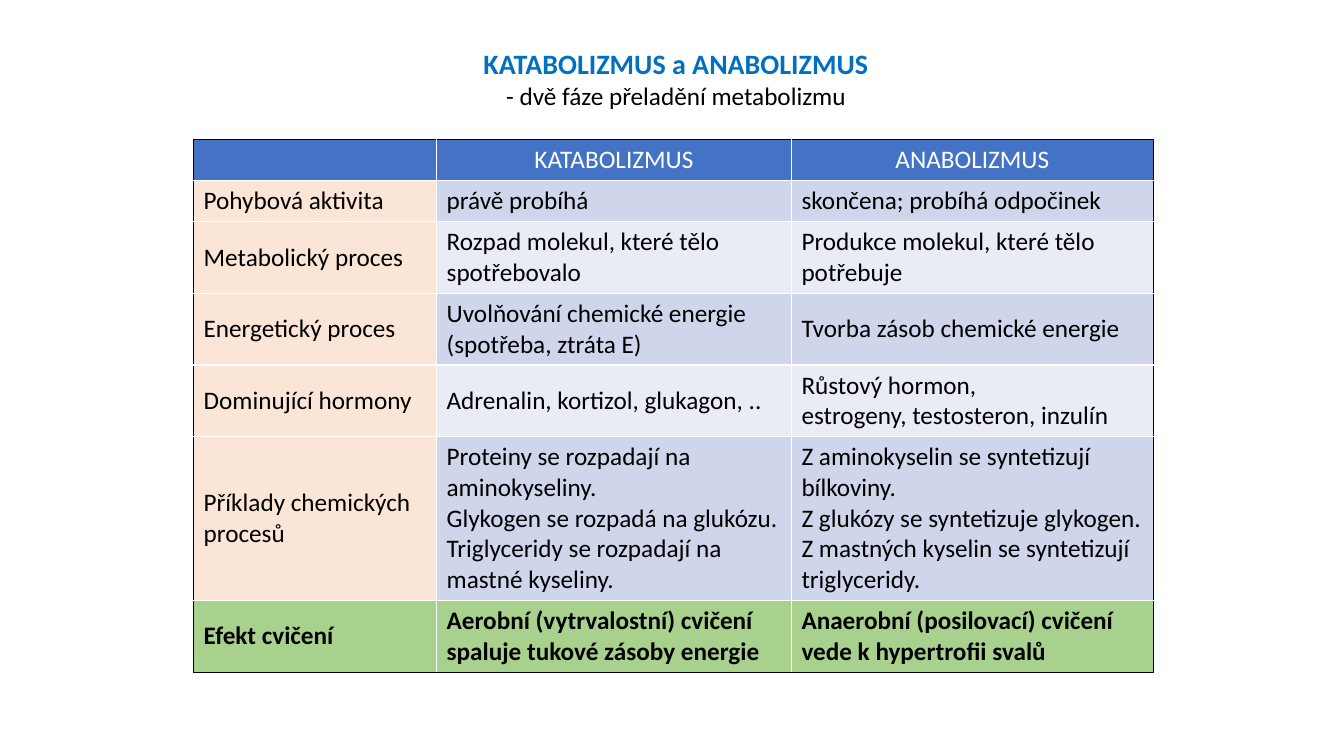
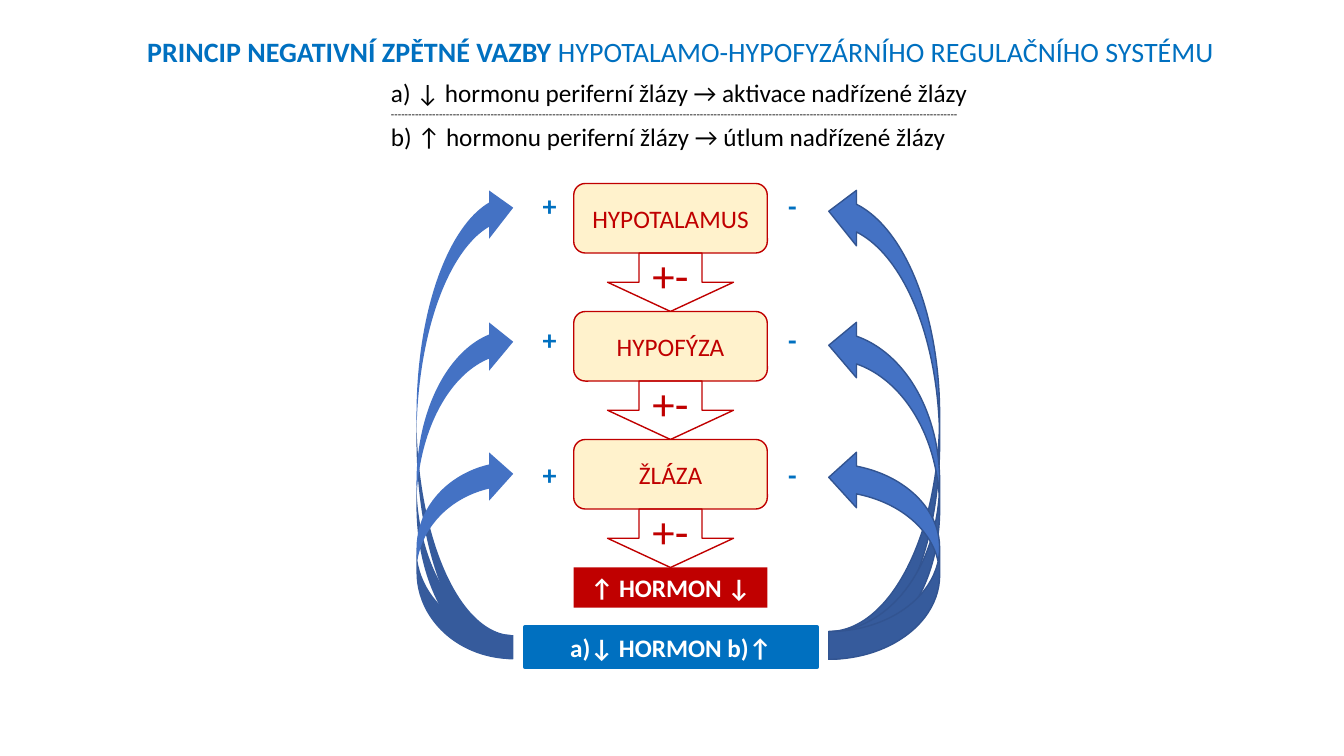
from collections import namedtuple

from lxml.etree import SubElement
from pptx import Presentation
from pptx.dml.color import RGBColor
from pptx.enum.shapes import MSO_SHAPE
from pptx.enum.text import MSO_ANCHOR, PP_ALIGN
from pptx.oxml.ns import qn
from pptx.util import Inches, Pt

FONT = "Calibri"
BODY_SIZE, TITLE_SIZE, SIGN_SIZE = 18, 20, 32
COLORS = {
    "black": "000000", "white": "FFFFFF", "title": "0070C0",
    "header": "4472C4", "label": "FBE5D6", "band_dark": "CFD5EA",
    "band_light": "E9EBF5", "effect": "A9D18E",
    "gland": "FFF2CC", "hormone": "C00000",
    "loop": "4472C4", "loop_edge": "325491",
}
Box = namedtuple("Box", "left top width height")
Span = namedtuple("Span", "text size color bold", defaults=(BODY_SIZE, "black", False))

TABLE_COLUMNS = [2.41, 3.52, 3.59]
TABLE_ROWS = [  # height, fill, cells; each cell lists its paragraphs
    (0.41, "header", [[], ["KATABOLIZMUS"], ["ANABOLIZMUS"]]),
    (0.41, "band_dark", [["Pohybová aktivita"], ["právě probíhá"],
                         ["skončena; probíhá odpočinek"]]),
    (0.7, "band_light", [["Metabolický proces"],
                         ["Rozpad molekul, které tělo spotřebovalo"],
                         ["Produkce molekul, které tělo potřebuje"]]),
    (0.7, "band_dark", [["Energetický proces"],
                        ["Uvolňování chemické energie (spotřeba, ztráta E)"],
                        ["Tvorba zásob chemické energie"]]),
    (0.7, "band_light", [["Dominující hormony"],
                         ["Adrenalin, kortizol, glukagon, .."],
                         ["Růstový hormon,", "estrogeny, testosteron, inzulín"]]),
    (1.6, "band_dark", [["Příklady chemických procesů"],
                        ["Proteiny se rozpadají na aminokyseliny.",
                         "Glykogen se rozpadá na glukózu.",
                         "Triglyceridy se rozpadají na mastné kyseliny."],
                        ["Z aminokyselin se syntetizují bílkoviny.",
                         "Z glukózy se syntetizuje glykogen.",
                         "Z mastných kyselin se syntetizují triglyceridy."]]),
    (0.7, "effect", [["Efekt cvičení"],
                     ["Aerobní (vytrvalostní) cvičení spaluje tukové zásoby energie"],
                     ["Anaerobní (posilovací) cvičení vede k hypertrofii svalů"]]),
]


def rgb(name):
    return RGBColor.from_string(COLORS[name])


def write(frame, paragraphs, align=PP_ALIGN.CENTER, gap=0):
    """Fill a text frame with lists of spans; gap is the space between paragraphs."""
    for index, spans in enumerate(paragraphs):
        para = frame.add_paragraph() if index else frame.paragraphs[0]
        para.alignment = align
        if index and gap:
            para.space_before = Pt(gap)
        for span in spans:
            run = para.add_run()
            run.text = span.text
            run.font.name = FONT
            run.font.size = Pt(span.size)
            run.font.bold = span.bold
            run.font.color.rgb = rgb(span.color)


def add_text(page, box, paragraphs, **layout):
    frame = page.shapes.add_textbox(*map(Inches, box)).text_frame
    frame.word_wrap = True
    write(frame, paragraphs, **layout)


def add_figure(page, kind, box, fill=None, line=None, width=1, span=None,
               anchor=MSO_ANCHOR.MIDDLE):
    figure = page.shapes.add_shape(kind, *map(Inches, box))
    figure.shadow.inherit = False
    if fill:
        figure.fill.solid()
        figure.fill.fore_color.rgb = rgb(fill)
    else:
        figure.fill.background()
    if line:
        figure.line.color.rgb = rgb(line)
        figure.line.width = Pt(width)
    else:
        figure.line.fill.background()
    if span:
        figure.text_frame.vertical_anchor = anchor
        write(figure.text_frame, [[span]])
    return figure


def set_borders(cell, outer_sides):
    """Black on the sides at the table's edge, white inside."""
    properties = cell._tc.get_or_add_tcPr()
    for side in "LRTB":
        line = SubElement(properties, qn(f"a:ln{side}"), w=str(Pt(1)))
        fill = SubElement(line, qn("a:solidFill"))
        color = "black" if side in outer_sides else "white"
        SubElement(fill, qn("a:srgbClr"), val=COLORS[color])


def add_phase_table(page, left, top):
    last_row, last_column = len(TABLE_ROWS) - 1, len(TABLE_COLUMNS) - 1
    heights = [height for height, _, _ in TABLE_ROWS]
    box = Box(left, top, sum(TABLE_COLUMNS), sum(heights))
    table = page.shapes.add_table(len(TABLE_ROWS), len(TABLE_COLUMNS),
                                  *map(Inches, box)).table
    table.first_row = table.horz_banding = False
    for column, width in zip(table.columns, TABLE_COLUMNS):
        column.width = Inches(width)
    for r, (height, row_fill, texts) in enumerate(TABLE_ROWS):
        table.rows[r].height = Inches(height)
        is_header, is_effect = r == 0, r == last_row
        for c, lines in enumerate(texts):
            cell = table.cell(r, c)
            edges = {"L": c == 0, "R": c == last_column, "T": is_header, "B": is_effect}
            set_borders(cell, [side for side, outer in edges.items() if outer])
            is_label = c == 0 and not is_header and not is_effect
            cell.fill.solid()
            cell.fill.fore_color.rgb = rgb("label" if is_label else row_fill)
            cell.vertical_anchor = MSO_ANCHOR.TOP if is_header else MSO_ANCHOR.MIDDLE
            color = "white" if is_header else "black"
            write(cell.text_frame,
                  [[Span(line, color=color, bold=is_effect)] for line in lines],
                  PP_ALIGN.CENTER if is_header else PP_ALIGN.LEFT)


def add_gland_chain(page, box, pitch):
    """Glands stacked at an equal pitch, each with an arrow down to the next."""
    gland_height, arrow_width = 0.69, 1.25
    arrow_left = box.left + (box.width - arrow_width) / 2
    for index, name in enumerate(["HYPOTALAMUS", "HYPOFÝZA", "ŽLÁZA"]):
        top = box.top + index * pitch
        add_figure(page, MSO_SHAPE.ROUNDED_RECTANGLE,
                   Box(box.left, top, box.width, gland_height),
                   "gland", "hormone", span=Span(name, color="hormone"))
        add_figure(page, MSO_SHAPE.DOWN_ARROW,
                   Box(arrow_left, top + gland_height, arrow_width, pitch - gland_height),
                   line="hormone", span=Span("+-", SIGN_SIZE, "hormone"))
    add_figure(page, MSO_SHAPE.RECTANGLE, Box(box.left, box.top + 3 * pitch, box.width, 0.4),
               "hormone", span=Span("↑ HORMON ↓", color="white", bold=True),
               anchor=MSO_ANCHOR.TOP)


def add_feedback_loops(page, box):
    """Nested curved arrows that rise on both sides from the foot of the box."""
    left_width, right_width = 0.96, 1.1
    bottom = box.top + box.height
    for length in (box.height, 3.39, 2.08):
        stimulating = add_figure(page, MSO_SHAPE.CURVED_LEFT_ARROW,
                                 Box(box.left, bottom - length, left_width, length), "loop")
        stimulating.rotation = 180
        center_x = box.left + box.width - right_width / 2
        center_y = bottom - length / 2
        inhibiting = add_figure(page, MSO_SHAPE.CURVED_UP_ARROW,
                                Box(center_x - length / 2, center_y - right_width / 2,
                                    length, right_width), "loop", "loop_edge")
        inhibiting.rotation = 270


def add_signs(page, box, sign):
    add_text(page, box, [[Span(sign, TITLE_SIZE, "title", True)]] * 3, gap=72)


def build_phases(page):
    add_phase_table(page, 1.92, 1.38)
    add_text(page, Box(4.42, 0.41, 4.57, 0.74), [
        [Span("KATABOLIZMUS a ANABOLIZMUS", TITLE_SIZE, "title", True)],
        [Span("- dvě fáze přeladění metabolizmu")]])


def build_feedback(page):
    add_text(page, Box(1.16, 0.29, 11.18, 0.44), [[
        Span("PRINCIP NEGATIVNÍ ZPĚTNÉ VAZBY ", TITLE_SIZE, "title", True),
        Span("HYPOTALAMO-HYPOFYZÁRNÍHO REGULAČNÍHO SYSTÉMU", TITLE_SIZE, "title")]])
    add_text(page, Box(3.78, 0.72, 5.93, 0.84), [
        [Span("a) ↓ hormonu periferní žlázy → aktivace nadřízené žlázy")],
        [Span("-" * 165, 8)],
        [Span("b) ↑ hormonu periferní žlázy → útlum nadřízené žlázy")]],
        align=PP_ALIGN.LEFT)
    top = 1.82
    add_feedback_loops(page, Box(4.13, top, 5.19, 4.72))
    add_gland_chain(page, Box(5.69, top, 1.92, 3.81), 1.27)
    for left, sign in ((5.21, "+"), (7.62, "-")):
        add_signs(page, Box(left, top, 0.48, 3.13), sign)
    add_figure(page, MSO_SHAPE.RECTANGLE, Box(5.21, 6.22, 2.89, 0.4), "title", "title", 3,
               Span("a)↓ HORMON b)↑", color="white", bold=True), MSO_ANCHOR.TOP)


def main():
    deck = Presentation()
    deck.slide_width, deck.slide_height = Inches(13.33), Inches(7.5)
    for build in (build_phases, build_feedback):
        build(deck.slides.add_slide(deck.slide_layouts[6]))
    deck.save("out.pptx")


if __name__ == "__main__":
    main()
